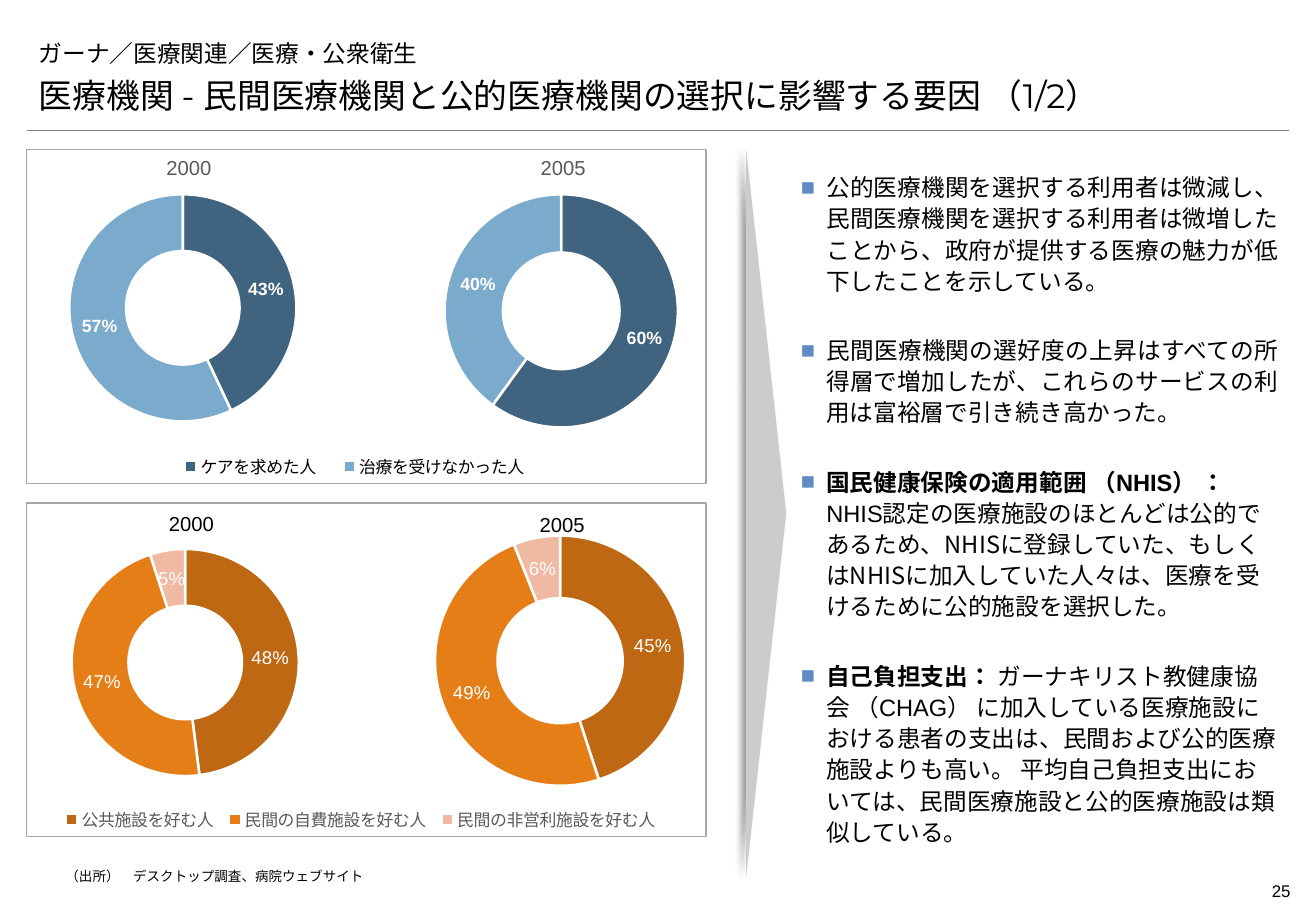
from lxml import etree
from pptx import Presentation
from pptx.chart.data import CategoryChartData
from pptx.dml.color import RGBColor
from pptx.enum.chart import XL_CHART_TYPE as ChartType, XL_LEGEND_POSITION as LegendPosition
from pptx.enum.lang import MSO_LANGUAGE_ID as Language
from pptx.enum.shapes import MSO_CONNECTOR as Connector, MSO_SHAPE as Shape
from pptx.enum.text import MSO_ANCHOR as Anchor, MSO_AUTO_SIZE as AutoSize, PP_ALIGN as Align
from pptx.oxml import parse_xml
from pptx.oxml.ns import nsdecls, qn
from pptx.util import Pt

PX = 9144
BLACK = RGBColor(0x00, 0x00, 0x00)
WHITE = RGBColor(0xFF, 0xFF, 0xFF)
GREY = RGBColor(0x59, 0x59, 0x59)
RULE = RGBColor(0x7F, 0x7F, 0x7F)
FRAME = RGBColor(0xA6, 0xA6, 0xA6)
ARROW = RGBColor(0xCC, 0xCC, 0xCC)
BULLET = RGBColor(0x5F, 0x8A, 0xC3)
BLUES = [RGBColor(0x40, 0x64, 0x7F), RGBColor(0x7A, 0xAB, 0xCC)]
ORANGES = [RGBColor(0xBE, 0x68, 0x13), RGBColor(0xE5, 0x7E, 0x17), RGBColor(0xEF, 0xB9, 0xA2)]
LATIN, HEADING, JAPANESE = "Arial", "Montserrat", "Noto Sans CJK JP"

CARE = ["ケアを求めた人", "治療を受けなかった人"]
FACILITIES = ["公共施設を好む人", "民間の自費施設を好む人", "民間の非営利施設を好む人"]

FINDINGS = [
    (Align.JUSTIFY, [("公的医療機関を選択する利用者は微減し、民間医療機関を選択する利用者は微増したことから、"
                      "政府が提供する医療の魅力が低下したことを示している。", JAPANESE, False)]),
    (Align.JUSTIFY, [("民間医療機関の選好度の上昇はすべての所得層で増加したが、"
                      "これらのサービスの利用は富裕層で引き続き高かった。", JAPANESE, False)]),
    (Align.LEFT, [("国民健康保険の適用範囲 （", JAPANESE, True),
                  ("NHIS", LATIN, True),
                  ("） ：", JAPANESE, True),
                  ("NHIS", LATIN, False),
                  ("認定の医療施設のほとんどは公的であるため、NHISに登録していた、もしくは"
                   "NHISに加入していた人々は、医療を受けるために公的施設を選択した。", JAPANESE, False)]),
    (Align.LEFT, [("自己負担支出： ", JAPANESE, True),
                  ("ガーナキリスト教健康協会 （", JAPANESE, False),
                  ("CHAG", LATIN, False),
                  ("） に加入している医療施設における患者の支出は、", JAPANESE, False),
                  ("民間および公的医療", LATIN, False),
                  ("施設よりも高い。 平均自己負担支出においては、"
                   "民間医療施設と公的医療施設は類似している。", JAPANESE, False)]),
]


class SlideBuilder:
    def __init__(self, slide):
        self.slide = slide
        self.shapes = slide.shapes

    def box(self, *lengths):
        return [length * PX for length in lengths]

    def move(self, holder, bounds):
        holder.left, holder.top, holder.width, holder.height = self.box(*bounds)

    def run(self, paragraph, words, size, face, bold=False):
        run = paragraph.add_run()
        run.text = words
        font = run.font
        font.size, font.name, font.bold = Pt(size), face, bold
        font.color.rgb = BLACK
        font.language_id = Language.JAPANESE
        east_asian = etree.Element(qn("a:ea"), typeface=JAPANESE)
        run._r.rPr.find(qn("a:latin")).addnext(east_asian)

    def heading(self, holder, bounds, words, size):
        self.move(holder, bounds)
        frame = holder.text_frame
        frame.auto_size = AutoSize.NONE
        frame.vertical_anchor = Anchor.BOTTOM
        paragraph = frame.paragraphs[0]
        properties = paragraph._p.get_or_add_pPr()
        properties.set("marL", "0")
        properties.set("indent", "0")
        etree.SubElement(properties, qn("a:buNone"))
        paragraph.alignment = Align.LEFT
        paragraph.space_before = Pt(0)
        self.run(paragraph, words, size, HEADING)

    def bullets(self, holder, bounds, items):
        self.move(holder, bounds)
        frame = holder.text_frame
        frame.auto_size = AutoSize.NONE
        for index, (alignment, parts) in enumerate(items):
            paragraph = frame.add_paragraph() if index else frame.paragraphs[0]
            properties = paragraph._p.get_or_add_pPr()
            properties.set("marL", str(21 * PX))
            properties.set("indent", str(-21 * PX))
            color = etree.SubElement(properties, qn("a:buClr"))
            etree.SubElement(color, qn("a:srgbClr"), val=str(BULLET))
            etree.SubElement(properties, qn("a:buFont"), typeface=LATIN)
            etree.SubElement(properties, qn("a:buChar"), char="■")
            paragraph.alignment = alignment
            paragraph.line_spacing = Pt(18.5)
            paragraph.space_before = Pt(22.5 if index else 0)
            for words, face, bold in parts:
                self.run(paragraph, words, 14, face, bold)

    def note(self, bounds, words, size, alignment=Align.LEFT, side=10):
        frame = self.shapes.add_textbox(*self.box(*bounds)).text_frame
        frame.word_wrap = True
        frame.margin_left = frame.margin_right = side * PX
        paragraph = frame.paragraphs[0]
        paragraph.alignment = alignment
        self.run(paragraph, words, size, LATIN)

    def rule(self, left, right, top):
        line = self.shapes.add_connector(Connector.STRAIGHT, *self.box(left, top, right, top))
        line.line.color.rgb, line.line.width = RULE, Pt(0.25)
        etree.SubElement(line._element.spPr, qn("a:effectLst"))

    def frame(self, bounds):
        panel = self.shapes.add_shape(Shape.RECTANGLE, *self.box(*bounds))
        panel.shadow.inherit = False
        panel.fill.background()
        panel.line.color.rgb, panel.line.width = FRAME, Pt(0.75)

    def pointer(self, bounds):
        wedge = self.shapes.add_shape(Shape.ISOSCELES_TRIANGLE, *self.box(*bounds))
        wedge.rotation = 90
        wedge.shadow.inherit = False
        wedge.fill.solid()
        wedge.fill.fore_color.rgb = ARROW
        wedge.line.fill.background()
        effects = wedge._element.spPr.find(qn("a:effectLst"))
        shadow = etree.SubElement(effects, qn("a:outerShdw"), blurRad=str(Pt(4)), dist=str(Pt(3)),
                                  dir="10800000", rotWithShape="0")
        tint = etree.SubElement(shadow, qn("a:srgbClr"), val=str(BLACK))
        etree.SubElement(tint, qn("a:alpha"), val="40000")

    def place(self, parent, index, bounds, area, inner=False):
        for old in parent.findall(qn("c:layout")):
            parent.remove(old)
        layout = etree.Element(qn("c:layout"))
        manual = etree.SubElement(layout, qn("c:manualLayout"))
        if inner:
            etree.SubElement(manual, qn("c:layoutTarget"), val="inner")
        for mode in ("xMode", "yMode"):
            etree.SubElement(manual, qn("c:" + mode), val="edge")
        left, top, width, height = area
        origin, extent = (left, top, 0, 0), (width, height, width, height)
        for tag, value, start, span in zip("xywh", bounds, origin, extent):
            etree.SubElement(manual, qn("c:" + tag), val=f"{(value - start) / span:.4f}")
        parent.insert(index, layout)

    def doughnut(self, area, year, year_at, year_color, ring, names, values, colors,
                 label_size, label_bold, legend_at=None, legend_color=BLACK):
        data = CategoryChartData(number_format="0%")
        data.categories = names
        data.add_series(year, values)
        chart = self.shapes.add_chart(ChartType.DOUGHNUT, *self.box(*area), data).chart
        chart.font.size, chart.font.name = Pt(10), LATIN
        chart.font.color.rgb = BLACK
        chart._chartSpace.find(qn("c:chart")).addnext(
            parse_xml(f'<c:spPr {nsdecls("c", "a")}><a:noFill/><a:ln><a:noFill/></a:ln></c:spPr>'))

        chart.has_title = True
        caption = chart.chart_title.text_frame.paragraphs[0].add_run()
        caption.text = year
        caption.font.size, caption.font.name, caption.font.bold = Pt(12), LATIN, False
        caption.font.color.rgb = year_color
        self.place(chart.chart_title._element, 1, year_at, area)

        plot = chart.plots[0]
        plot.vary_by_categories = True
        self.place(chart._chartSpace.chart.plotArea, 0, (*ring, ring[-1]), area, inner=True)
        for index, color in enumerate(colors):
            slice_format = plot.series[0].points[index].format
            slice_format.fill.solid()
            slice_format.fill.fore_color.rgb = color
            slice_format.line.color.rgb, slice_format.line.width = WHITE, Pt(1.5)

        plot.has_data_labels = True
        labels = plot.data_labels
        labels.show_value = True
        labels.show_percentage = labels.show_category_name = labels.show_legend_key = False
        labels.number_format, labels.number_format_is_linked = "0%", False
        labels.font.size, labels.font.name, labels.font.bold = Pt(label_size), LATIN, label_bold
        labels.font.color.rgb = WHITE

        chart.has_legend = legend_at is not None
        if legend_at:
            legend = chart.legend
            legend.position, legend.include_in_layout = LegendPosition.BOTTOM, False
            legend.font.size, legend.font.name = Pt(10), JAPANESE
            legend.font.color.rgb = legend_color
            self.place(legend._element, 1, legend_at, area)


def main():
    deck = Presentation()
    deck.slide_width, deck.slide_height = 1083 * PX, 750 * PX
    page = SlideBuilder(deck.slides.add_slide(deck.slide_layouts[3]))
    title, headline, findings = page.slide.placeholders

    page.rule(22, 1061, 107)
    page.note((983, 720, 79, 27), "25", 10, Align.RIGHT, side=0)
    page.heading(title, (22, 26, 1039, 34), "ガーナ／医療関連／医療・公衆衛生", 14)
    page.heading(headline, (22, 56, 1040, 44),
                 "医療機関 - 民間医療機関と公的医療機関の選択に影響する要因 （1/2）", 20)

    care = (CARE, (0.43, 0.57), BLUES, 10.5, True)
    page.doughnut((6, 117, 268, 258), "2000", (134, 125), GREY, (57, 160, 187), *care)
    care = (CARE, (0.6, 0.4), BLUES, 10.5, True)
    page.doughnut((101, 107, 526, 312), "2005", (442, 125), GREY, (366, 160, 192), *care,
                  (134, 372, 316, 25))
    facilities = (FACILITIES, (0.48, 0.47, 0.05), ORANGES, 11, False)
    page.doughnut((8, 409, 268, 258), "2000", (136, 418), BLACK, (59, 452, 187), *facilities)
    facilities = (FACILITIES, (0.45, 0.49, 0.06), ORANGES, 11, False)
    page.doughnut((22, 398, 559, 312), "2005", (441, 419), BLACK, (358, 441, 206), *facilities,
                  (46, 662, 502, 25), GREY)

    page.bullets(findings, (649, 135, 413, 542), FINDINGS)
    page.pointer((331, 406, 599, 33))
    page.note((44, 710, 1022, 24), "（出所）　デスクトップ調査、病院ウェブサイト", 8)
    for top in (123, 414):
        page.frame((22, top, 559, 275))
    deck.save("out.pptx")


if __name__ == "__main__":
    main()
